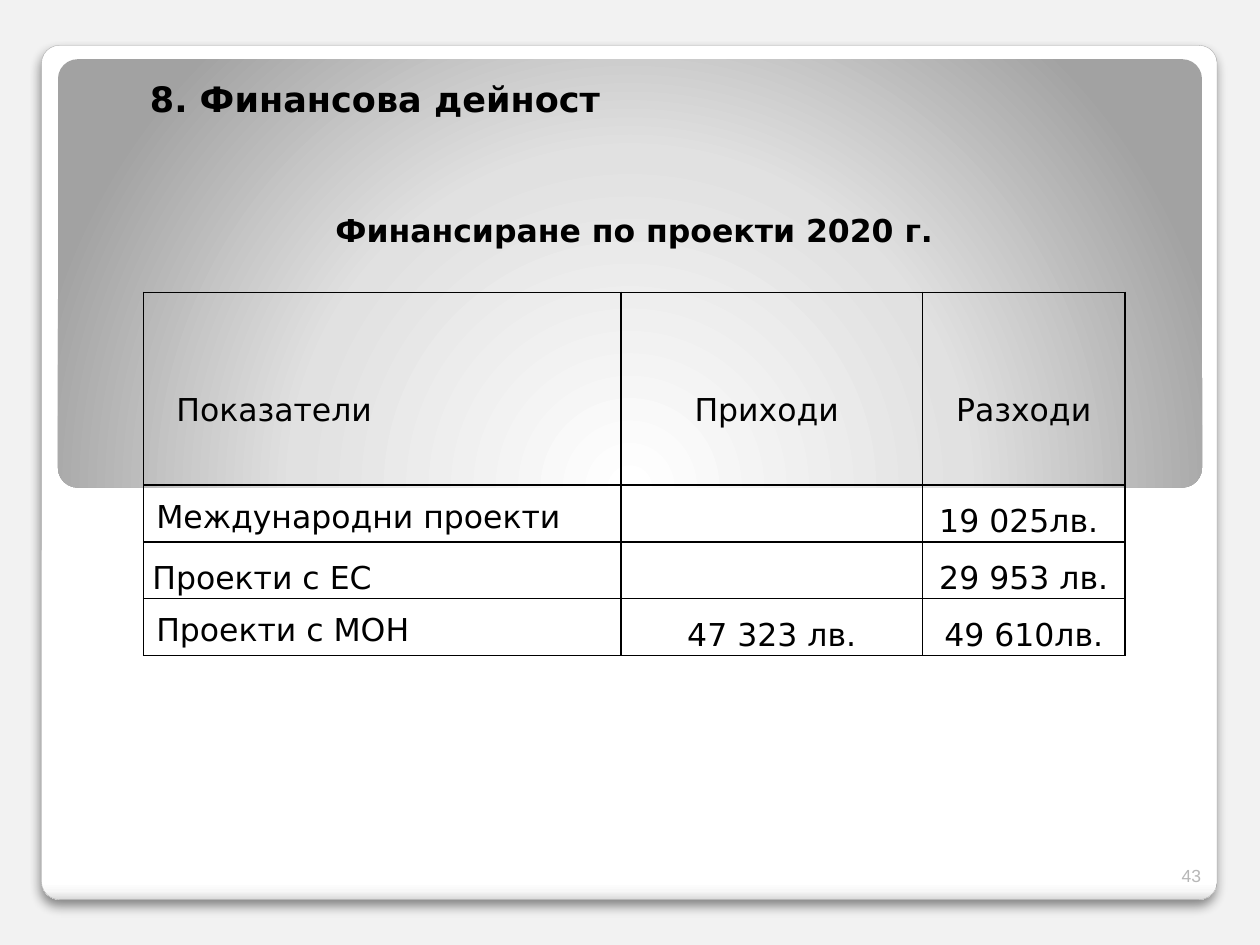
import pptx
import pptx.util
import pptx.dml.color
import pptx.enum.shapes
import pptx.enum.text
import pptx.oxml
import pptx.oxml.ns

Inches = pptx.util.Inches
Align = pptx.enum.text.PP_ALIGN
Anchor = pptx.enum.text.MSO_ANCHOR
NS = pptx.oxml.ns.nsdecls("a")
FACE = "DejaVu Sans"


def color(code):
    return pptx.dml.color.RGBColor.from_string(code)


def make(xml):
    return pptx.oxml.parse_xml(xml)


def style(para, size, face=FACE, code="000000", bold=False, align=Align.LEFT):
    para.alignment = align
    for run in para.runs:
        font = run.font
        font.size = pptx.util.Pt(size)
        font.name = face
        font.bold = bold
        font.color.rgb = color(code)


def add_text(slide, box, text, anchor, **look):
    frame = slide.shapes.add_textbox(*map(Inches, box)).text_frame
    frame.word_wrap = True
    frame.vertical_anchor = anchor
    frame.text = text
    style(frame.paragraphs[0], **look)
    return frame


def add_panel(slide, box, round_by, stops, shade):
    kind = pptx.enum.shapes.MSO_SHAPE.ROUNDED_RECTANGLE
    panel = slide.shapes.add_shape(kind, *map(Inches, box))
    panel.adjustments[0] = round_by
    panel.shadow.inherit = False
    panel.line.fill.background()
    marks = "".join(
        f'<a:gs pos="{place * 1000}"><a:srgbClr val="{code}"/></a:gs>'
        for place, code in stops
    )
    fill = make(
        f'<a:gradFill {NS} rotWithShape="1"><a:gsLst>{marks}</a:gsLst>{shade}</a:gradFill>'
    )
    panel.element.spPr.find(pptx.oxml.ns.qn("a:prstGeom")).addnext(fill)
    return panel


def add_card(slide):
    stops = [(0, "FFFFFF"), (98, "FFFFFF"), (99, "F7F7F7"), (100, "DADADA")]
    card = add_panel(
        slide, (0.33, 0.36, 9.33, 6.78), 0.021, stops, '<a:lin ang="5400000" scaled="0"/>'
    )
    card.line.color.rgb = color("A4A4A4")
    card.line.width = pptx.util.Pt(0.16)
    shadow = make(
        f'<a:outerShdw {NS} blurRad="76200" dist="50800" dir="5400000" algn="tl" '
        'rotWithShape="0"><a:srgbClr val="000000"><a:alpha val="45000"/>'
        "</a:srgbClr></a:outerShdw>"
    )
    card.element.spPr.find(pptx.oxml.ns.qn("a:effectLst")).append(shadow)


def add_header(slide):
    stops = [(0, "FFFFFF"), (55, "E1E1E1"), (100, "A2A2A2")]
    shade = (
        '<a:path path="circle"><a:fillToRect l="50000" t="175000" '
        'r="50000" b="-75000"/></a:path>'
    )
    add_panel(slide, (0.46, 0.47, 9.08, 3.4), 0.046, stops, shade)


def set_edges(cell, sides):
    props = cell._tc.get_or_add_tcPr()
    for spot, side in enumerate("LRTB"):
        code = '<a:solidFill><a:srgbClr val="000000"/></a:solidFill>'
        paint = code if side in sides else "<a:noFill/>"
        props.insert(spot, make(f'<a:ln{side} {NS} w="12700">{paint}</a:ln{side}>'))


def set_cell(cell, text, align=Align.LEFT, bold=False):
    cell.text = text
    cell.vertical_anchor = Anchor.BOTTOM
    style(cell.text_frame.paragraphs[0], 18, bold=bold, align=align)


def set_loose(cell):
    cell.vertical_anchor = Anchor.TOP
    cell.margin_left = cell.margin_right = Inches(0.07)
    cell.margin_top = cell.margin_bottom = 0
    cell.text_frame.paragraphs[0].line_spacing = 1.5


def add_grid(slide):
    lines = [
        ["Финансиране по проекти 2020 г.", "", ""],
        ["", "", ""],
        ["Показатели", "Приходи ", "Разходи"],
        ["", "", ""],
        ["Международни проекти", "", "19 025лв. "],
        ["Проекти с ЕС", "", "29 953 лв."],
        ["Проекти с МОН", "47 323 лв.", "49 610лв."],
    ]
    edges = ["B", "LRT", "LR", "LRB"] + ["LRTB"] * 3
    highs = [0.7, 0.7, 0.43, 0.4] + [0.45] * 3
    wides = [3.79, 2.39, 1.61]
    box = (1.14, 1.62, sum(wides), sum(highs))
    table = slide.shapes.add_table(7, 3, *map(Inches, box)).table
    table.first_row = table.horz_banding = False
    for col, wide in zip(table.columns, wides):
        col.width = Inches(wide)
    for r, line in enumerate(lines):
        table.rows[r].height = Inches(highs[r])
        for c, text in enumerate(line):
            cell = table.cell(r, c)
            cell.fill.background()
            set_edges(cell, edges[r])
            set_cell(cell, text, Align.CENTER if c else Align.LEFT)
            if r > 3 and c and text:
                set_loose(cell)
    set_loose(table.cell(5, 0))
    table.cell(2, 0).margin_left = Inches(0.26)
    title = table.cell(0, 0)
    title.merge(table.cell(0, 2))
    set_cell(title, lines[0][0], Align.CENTER, True)
    title.margin_bottom = Inches(0.34)


def main():
    deck = pptx.Presentation()
    deck.slide_width, deck.slide_height = Inches(10), Inches(7.5)
    slide = deck.slides.add_slide(deck.slide_layouts[6])
    slide.background.fill.solid()
    slide.background.fill.fore_color.rgb = color("F2F2F2")
    add_card(slide)
    add_header(slide)
    title = add_text(
        slide, (0.59, 0.56, 8.9, 0.44), "8. Финансова дейност", Anchor.MIDDLE,
        size=20, bold=True, align=Align.JUSTIFY,
    )
    title.margin_left = Inches(0.6)
    add_grid(slide)
    add_text(
        slide, (9.13, 6.68, 0.5, 0.4), "43", Anchor.BOTTOM,
        size=10, face="Arial", code="B7B7B7", align=Align.RIGHT,
    )
    deck.save("out.pptx")


if __name__ == "__main__":
    main()
